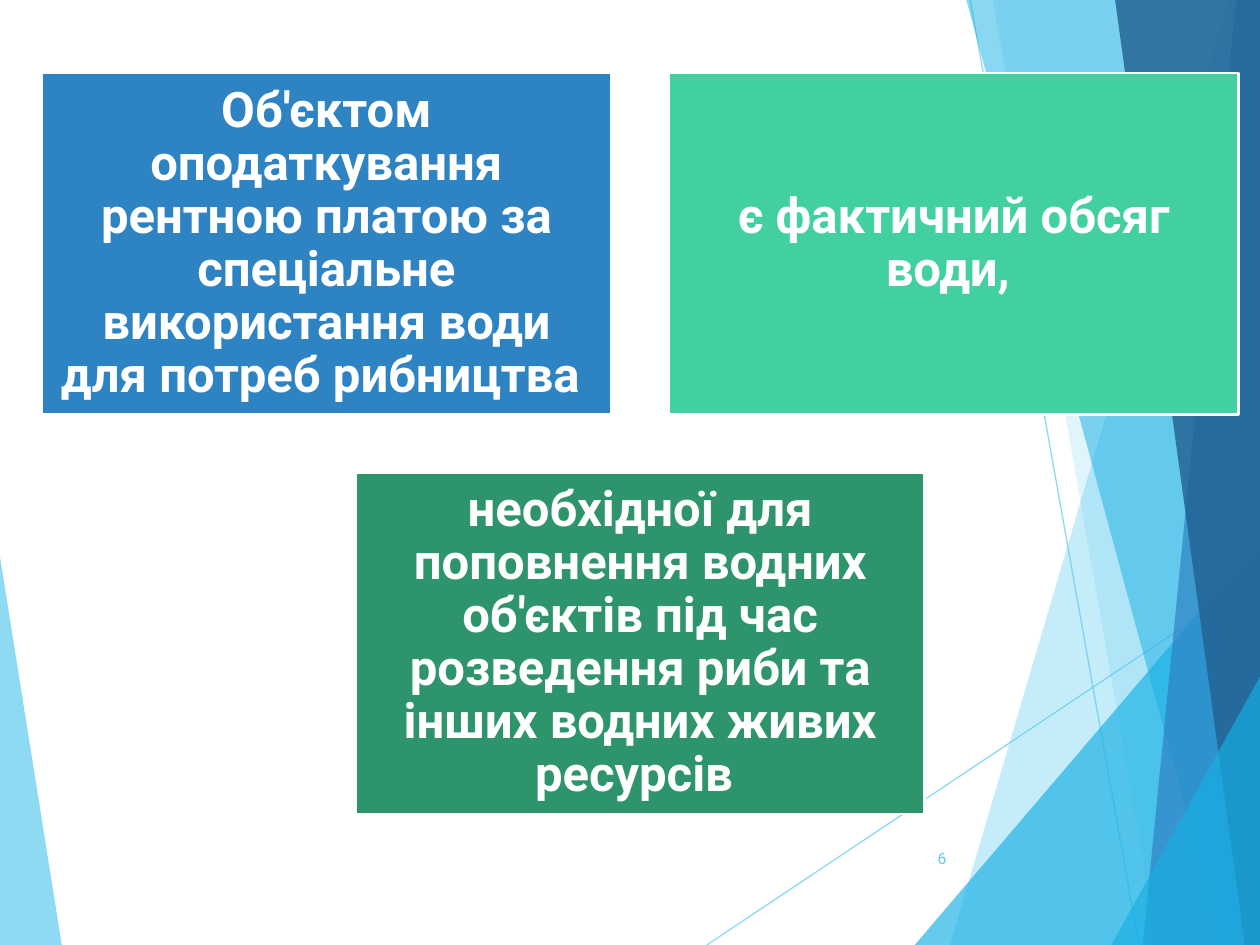
import pptx
import pptx.util
import pptx.dml.color
import pptx.enum.shapes
import pptx.enum.text
import pptx.oxml.ns
from dataclasses import dataclass
from lxml import etree


@dataclass(frozen=True)
class Theme:
    font: str = "Roboto"
    white: str = "FFFFFF"
    sky: str = "5FCBEF"
    cyan: str = "17B0E4"
    blue: str = "2E83C3"
    navy: str = "226292"
    mint: str = "42D0A2"
    green: str = "2E946B"
    card_size: float = 28
    number_size: float = 9
    hairline: float = 0.75
    border: float = 1.5
    card_inset: float = 0.12


class Deck:
    """Draws themed elements on one slide, measured on a 100 by 75 grid."""

    columns, rows = 100, 75

    def __init__(self, theme):
        self.theme = theme
        self.presentation = pptx.Presentation()
        self.presentation.slide_width = pptx.util.Inches(10)
        self.presentation.slide_height = pptx.util.Inches(7.5)
        self.slide = self.presentation.slides.add_slide(self.presentation.slide_layouts[6])

    def point(self, column, row):
        return (round(self.presentation.slide_width * column / self.columns),
                round(self.presentation.slide_height * row / self.rows))

    def apply(self, target, values):
        for name, value in values.items():
            setattr(target, name, value)

    def paint(self, fill, colour, opacity=100):
        fill.solid()
        fill.fore_color.rgb = pptx.dml.color.RGBColor.from_string(colour)
        if opacity < 100:
            for tint in fill._xPr.iter(pptx.oxml.ns.qn("a:srgbClr")):
                alpha = etree.SubElement(tint, pptx.oxml.ns.qn("a:alpha"))
                alpha.set("val", str(opacity * 1000))

    def facet(self, corners, colour, opacity):
        start, *others = [self.point(*corner) for corner in corners]
        builder = self.slide.shapes.build_freeform(*start)
        builder.add_line_segments(others, close=True)
        facet = builder.convert_to_shape()
        facet.shadow.inherit = False
        self.paint(facet.fill, colour, opacity)
        facet.line.fill.background()

    def ray(self, start, end, colour, opacity):
        ray = self.slide.shapes.add_connector(
            pptx.enum.shapes.MSO_CONNECTOR.STRAIGHT, *self.point(*start), *self.point(*end))
        ray.line.width = pptx.util.Pt(self.theme.hairline)
        self.paint(ray.line.fill, colour, opacity)
        etree.SubElement(ray._element.spPr, pptx.oxml.ns.qn("a:effectLst"))

    def add_wording(self, frame, wording, size, colour, alignment, bold=False):
        self.apply(frame, {"word_wrap": True,
                           "vertical_anchor": pptx.enum.text.MSO_ANCHOR.MIDDLE})
        paragraph = frame.paragraphs[0]
        paragraph.alignment = alignment
        run = paragraph.add_run()
        run.text = wording
        self.apply(run.font, {"name": self.theme.font, "size": pptx.util.Pt(size), "bold": bold})
        run.font.color.rgb = pptx.dml.color.RGBColor.from_string(colour)
        return paragraph

    def card(self, place, extent, wording, colour):
        card = self.slide.shapes.add_shape(
            pptx.enum.shapes.MSO_SHAPE.RECTANGLE, *self.point(*place), *self.point(*extent))
        card.shadow.inherit = False
        self.paint(card.fill, colour)
        self.paint(card.line.fill, self.theme.white)
        card.line.width = pptx.util.Pt(self.theme.border)
        inset = pptx.util.Inches(self.theme.card_inset)
        self.apply(card.text_frame, {f"margin_{side}": inset
                                     for side in ("left", "right", "top", "bottom")})
        statement = self.add_wording(card.text_frame, wording, self.theme.card_size,
                                     self.theme.white, pptx.enum.text.PP_ALIGN.CENTER, bold=True)
        statement.line_spacing = 0.9

    def page_number(self, place, extent, wording):
        number = self.slide.shapes.add_textbox(*self.point(*place), *self.point(*extent))
        self.add_wording(number.text_frame, wording, self.theme.number_size,
                         self.theme.sky, pptx.enum.text.PP_ALIGN.RIGHT)


def main():
    theme = Theme()
    deck = Deck(theme)
    right, bottom = deck.columns, deck.rows

    deck.facet([(0, 44.2), (4.9, bottom), (0, bottom)], theme.sky, 70)
    deck.ray((56.1, bottom), (right, 45.7), theme.sky, 70)
    deck.ray((77, 0), (90.4, bottom), theme.sky, 70)

    facets = [
        ((97.5, 0), 75.4, theme.sky, 36),
        ((78.8, 0), 91.9, theme.sky, 20),
        ((right, 42.9), 72.6, theme.cyan, 66),
        ((76.7, 0), 97, theme.cyan, 50),
        ((98.1, 0), 90.7, theme.blue, 70),
        ((88.5, 0), 98.8, theme.navy, 82),
        ((right, 53.7), 88.2, theme.cyan, 66),
    ]
    for apex, foot, colour, opacity in facets:
        deck.facet([apex, (foot, bottom), (right, bottom), (right, apex[1])], colour, opacity)

    extent = width, height = 45.2, 27.1
    left, top, gap = 3.3, 5.8, 4.6
    step = width + gap
    lower = top + height + gap
    cards = [
        ((left, top), "Об'єктом оподаткування рентною платою за спеціальне "
                      "використання води для потреб рибництва ", theme.blue),
        ((left + step, top), "є фактичний обсяг води, ", theme.mint),
        ((left + step / 2, lower), "необхідної для поповнення водних об'єктів під час "
                                   "розведення риби та інших водних живих ресурсів ", theme.green),
    ]
    for place, wording, colour in cards:
        deck.card(place, extent, wording, colour)

    deck.page_number((70.5, 66.1), (5.6, 4), "6")
    deck.presentation.save("out.pptx")


if __name__ == "__main__":
    main()
